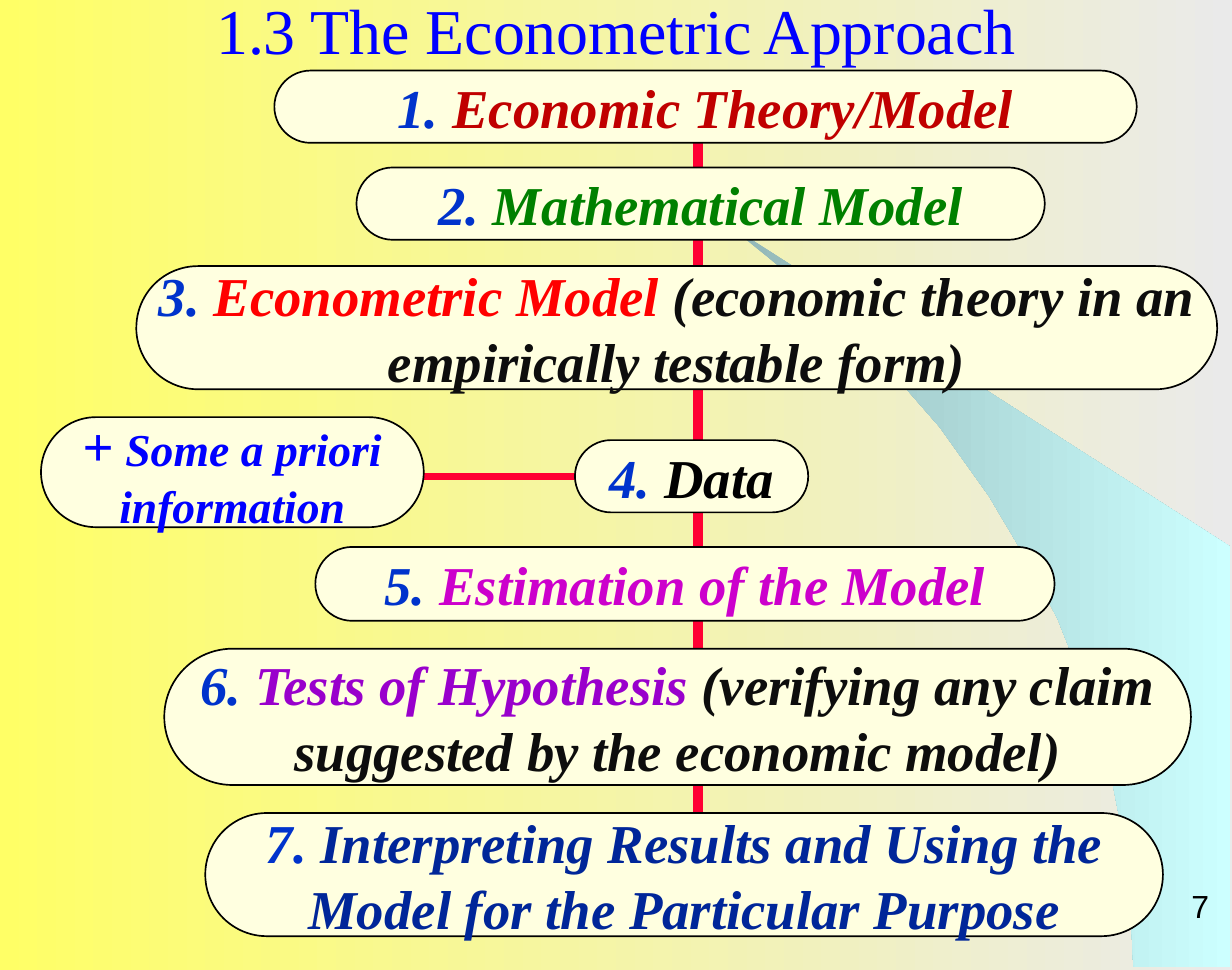
from pptx import Presentation
from pptx.dml.color import RGBColor
from pptx.enum import shapes, text
from pptx.oxml import parse_xml
from pptx.oxml.ns import nsdecls
from pptx.util import Inches, Pt


def paint(fill, *stops):
    if len(stops) == 1:
        fill.solid()
        fill.fore_color.rgb = RGBColor.from_string(stops[0])
        return
    fill.gradient()
    fill.gradient_angle = 0
    for stop, color in zip(fill.gradient_stops, stops):
        stop.color.rgb = RGBColor.from_string(color)


def write(shape, runs, align, anchor, inset, wrap=True):
    frame = shape.text_frame
    form = {"word_wrap": wrap, "vertical_anchor": anchor,
            "margin_left": Inches(inset), "margin_right": Inches(inset),
            "margin_top": 0, "margin_bottom": 0}
    for key, value in form.items():
        setattr(frame, key, value)
    para = frame.paragraphs[0]
    para.alignment = align
    for words, size, color, face, bold in runs:
        run = para.add_run()
        run.text = words
        form = {"size": Pt(size), "name": face, "bold": bold, "italic": bold}
        for key, value in form.items():
            setattr(run.font, key, value)
        paint(run.font.fill, color)


prs = Presentation()
prs.slide_width, prs.slide_height = Inches(7.5), Inches(5.906)
slide = prs.slides.add_slide(prs.slide_layouts[6])
paint(slide.background.fill, "FFFF66", "EAEAEA")
items = slide.shapes
serif = "Times New Roman"
mid, center = text.MSO_ANCHOR.MIDDLE, text.PP_ALIGN.CENTER

curve = [(6.9, 5.89), (7.49, 5.89), (7.49, 3.33), (4.42, 1.36), (4.68, 1.57),
         (4.9, 1.75), (5.14, 1.97), (5.37, 2.2), (5.72, 2.6), (6.02, 3.02),
         (6.24, 3.39), (6.44, 3.77), (6.59, 4.15), (6.7, 4.5), (6.78, 4.8),
         (6.85, 5.16), (6.88, 5.48)]
points = [(Inches(x), Inches(y)) for x, y in curve]
pen = items.build_freeform(*points[0])
pen.add_line_segments(points[1:])
swoosh = pen.convert_to_shape()
swoosh.shadow.inherit = False
swoosh.line.fill.background()
paint(swoosh.fill, "92B6B6", "CCFFFF")

title = items.add_textbox(0, Inches(-0.02), Inches(7.5), Inches(0.39))
write(title, [("1.3 The Econometric Approach", 28, "0000FF", serif, False)],
      center, mid, 0.1)

page = items.add_textbox(Inches(5.9), Inches(5.3), Inches(1.56), Inches(0.33))
write(page, [("7", 14, "000000", "Arial", False)],
      text.PP_ALIGN.RIGHT, text.MSO_ANCHOR.BOTTOM, 0.1, False)

steps = [
    (1.67, 0.43, 5.25, 0.44, [("Economic Theory/Model", "C00000")]),
    (2.17, 1.02, 4.19, 0.44, [("Mathematical Model", "008000")]),
    (0.83, 1.62, 6.58, 0.75, [
        ("Econometric Model ", "FF0000"),
        ("(economic theory in an empirically testable form)", "0D0D0D")]),
    (3.5, 2.68, 1.42, 0.44, [("Data", "000000")]),
    (1.92, 3.33, 4.5, 0.45, [("Estimation of the Model", "CC00CC")]),
    (1, 3.95, 6.25, 0.83, [
        ("Tests of Hypothesis ", "9900CC"),
        ("(verifying any claim suggested by the economic model)", "0D0D0D")]),
    (1.25, 4.95, 5.83, 0.75, [
        ("Interpreting Results and Using the Model for the Particular Purpose",
         "002699")]),
]
boxes = []
for num, (x, y, w, h, parts) in enumerate(steps, 1):
    runs = [(f"{num}. ", 24, "0033CC", serif, True)]
    runs += [(words, 24, color, serif, True) for words, color in parts]
    boxes.append((x, y, w, h, runs))
boxes.append((0.25, 2.54, 2.33, 0.67, [
    ("+", 24, "0000FF", serif, True),
    (" Some a priori information", 20, "0000FF", serif, True)]))

spine = 4.25
ends = [((spine, a[1] + a[3]), (spine, b[1]), 4.5)
        for a, b in zip(steps, steps[1:])]
ends.append(((2.58, 2.9), (3.5, 2.9), 3))
links = []
for start, stop, width in ends:
    link = items.add_connector(shapes.MSO_CONNECTOR.STRAIGHT,
                               *map(Inches, start + stop))
    link.line.width = Pt(width)
    paint(link.line.fill, "FF0033")
    link._element.spPr.append(parse_xml(f"<a:effectLst {nsdecls('a')}/>"))
    links.append(link)

pills = []
for x, y, w, h, runs in boxes:
    pill = items.add_shape(shapes.MSO_SHAPE.ROUNDED_RECTANGLE,
                           Inches(x), Inches(y), Inches(w), Inches(h))
    pill.adjustments[0] = 0.5
    pill.shadow.inherit = False
    paint(pill.fill, "FFFFE0")
    paint(pill.line.fill, "000000")
    pill.line.width = Pt(0.75)
    write(pill, runs, center, mid, 0)
    pills.append(pill)
links[-1].end_connect(pills[3], 1)

prs.save("out.pptx")
